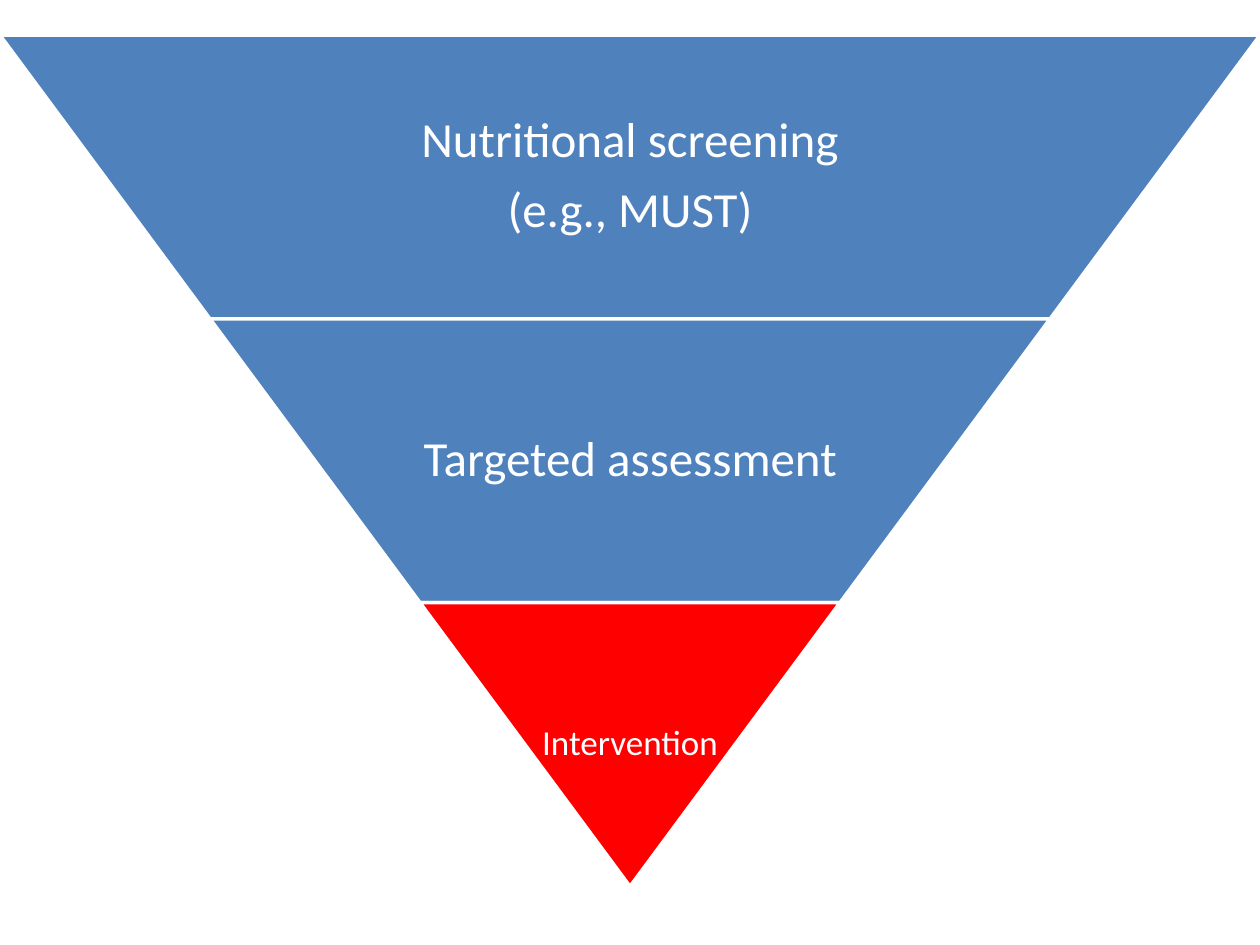
import pptx
import pptx.util
import pptx.dml.color
import pptx.enum.shapes
import pptx.enum.text

Cm = pptx.util.Cm
Pt = pptx.util.Pt

BLUE = pptx.dml.color.RGBColor(0x4F, 0x81, 0xBD)
RED = pptx.dml.color.RGBColor(0xFF, 0x00, 0x00)
WHITE = pptx.dml.color.RGBColor(0xFF, 0xFF, 0xFF)

SLIDE_WIDTH = 25.4
SLIDE_HEIGHT = 19.05
FUNNEL_TOP = 0.71
TIER_HEIGHT = 5.72

TIERS = [
    (["Nutritional screening", "(e.g., MUST)"], BLUE, 28, 0.65),
    (["Targeted assessment"], BLUE, 28, 0.65),
    (["Intervention"], RED, 20, 1),
]


def add_tier(slide, top, width, inset, color):
    """Add one upside-down trapezoid, centred on the slide."""
    left = (SLIDE_WIDTH - width) / 2
    shape = slide.shapes.add_shape(
        pptx.enum.shapes.MSO_SHAPE.TRAPEZOID, Cm(left), Cm(top), Cm(width), Cm(TIER_HEIGHT)
    )
    shape.rotation = 180
    shape.adjustments[0] = inset / min(width, TIER_HEIGHT)
    shape.shadow.inherit = False
    shape.fill.solid()
    shape.fill.fore_color.rgb = color
    shape.line.color.rgb = WHITE
    shape.line.width = Pt(2)


def add_label(slide, lines, *, top, width, size, margin, font="Calibri", color=WHITE):
    """Add a centred text box with one paragraph for each line."""
    left = (SLIDE_WIDTH - width) / 2
    box = slide.shapes.add_textbox(Cm(left), Cm(top), Cm(width), Cm(TIER_HEIGHT))
    frame = box.text_frame
    frame.word_wrap = True
    frame.vertical_anchor = pptx.enum.text.MSO_ANCHOR.MIDDLE
    frame.margin_left = frame.margin_right = Cm(margin)
    frame.margin_top = frame.margin_bottom = Cm(margin)
    frame.text = "\n".join(lines)
    for paragraph in frame.paragraphs:
        paragraph.alignment = pptx.enum.text.PP_ALIGN.CENTER
        paragraph.line_spacing = 0.9
        paragraph.space_after = Pt(size * 0.35)
        paragraph.font.name = font
        paragraph.font.size = Pt(size)
        paragraph.font.color.rgb = color


def main():
    """Build the funnel slide and save it."""
    presentation = pptx.Presentation()
    presentation.slide_width = Cm(SLIDE_WIDTH)
    presentation.slide_height = Cm(SLIDE_HEIGHT)
    slide = presentation.slides.add_slide(presentation.slide_layouts[6])

    inset = SLIDE_WIDTH / (2 * len(TIERS))
    for index, (lines, color, size, label_share) in enumerate(TIERS):
        top = FUNNEL_TOP + index * TIER_HEIGHT
        width = SLIDE_WIDTH - 2 * inset * index
        add_tier(slide, top, width, inset, color)
        add_label(slide, lines, top=top, width=width * label_share, size=size, margin=size / 280)

    presentation.save("out.pptx")


if __name__ == "__main__":
    main()
